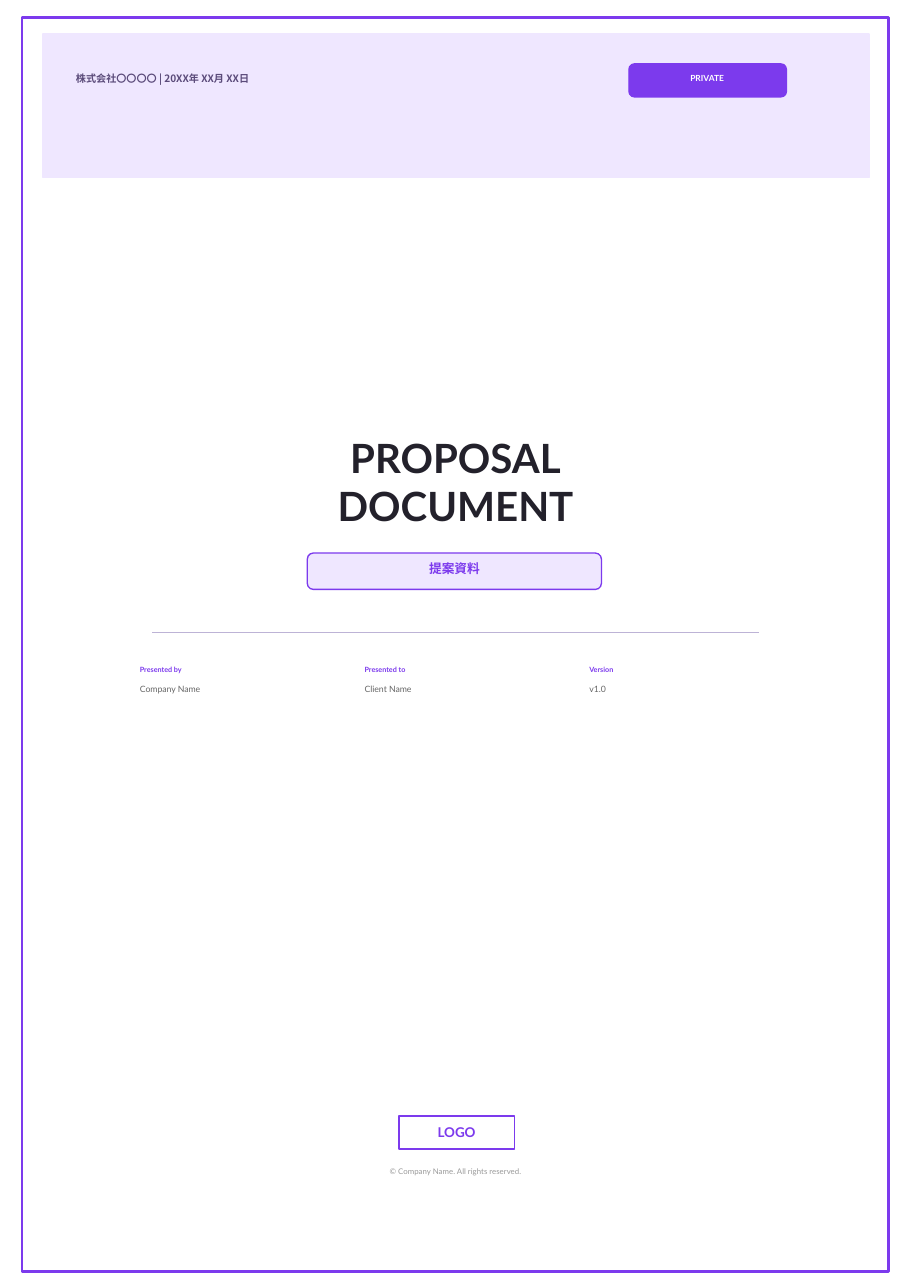
import dataclasses

import pptx
import pptx.dml.color
import pptx.enum.shapes
import pptx.enum.text
import pptx.oxml
import pptx.oxml.ns
import pptx.util

SHAPE = pptx.enum.shapes.MSO_SHAPE
ALIGN = pptx.enum.text.PP_ALIGN
CELL = 0.1  # inches per grid column and row
COLS, ROWS = 82.7, 116.9


@dataclasses.dataclass(frozen=True)
class Theme:
    accent: str = "7C3AED"
    tint: str = "EFE7FF"
    rule: str = "BDB3D6"
    ink: str = "23212B"
    date_ink: str = "5B4B7A"
    body: str = "666666"
    muted: str = "999999"
    white: str = "FFFFFF"
    latin: str = "Lato"
    japanese: str = "Noto Sans CJK JP"
    title: float = 26.3
    logo: float = 8.8
    subtitle: float = 8.3
    date: float = 6.6
    value: float = 5.7
    badge: float = 5.5
    footer: float = 5.1
    label: float = 4.7
    frame_line: float = 1.93
    logo_line: float = 1.05
    box_line: float = 0.88
    rule_line: float = 0.7


T = Theme()


def cells(n):
    return pptx.util.Inches(n * CELL)


def rgb(value):
    return pptx.dml.color.RGBColor.from_string(value)


def inside(box, x, y, w, h):
    """Move a rectangle, given in cells, to the corner of its box."""
    return box[0] + x, box[1] + y, w, h


def write(sp, lines, size, color, font=T.latin, bold=True, align=ALIGN.CENTER):
    tf = sp.text_frame
    for name, value in {
        "word_wrap": True,
        "auto_size": pptx.enum.text.MSO_AUTO_SIZE.NONE,
        "vertical_anchor": pptx.enum.text.MSO_ANCHOR.MIDDLE,
        "margin_left": 0, "margin_right": 0, "margin_top": 0, "margin_bottom": 0,
    }.items():
        setattr(tf, name, value)
    for i, line in enumerate(lines):
        p = tf.add_paragraph() if i else tf.paragraphs[0]
        p.alignment = align
        r = p.add_run()
        r.text = line
        for name, value in {"name": font, "size": pptx.util.Pt(size), "bold": bold}.items():
            setattr(r.font, name, value)
        r.font.color.rgb = rgb(color)
        ea = pptx.oxml.parse_xml(f'<a:ea {pptx.oxml.ns.nsdecls("a")} typeface="{font}"/>')
        r.font._element.append(ea)


def add_text(s, rect, text, size, color, **style):
    sp = s.shapes.add_textbox(*map(cells, rect))
    write(sp, [text], size, color, **style)


def add_box(s, rect, line, width, fill=None, kind=SHAPE.RECTANGLE):
    sp = s.shapes.add_shape(kind, *map(cells, rect))
    sp.shadow.inherit = False
    if fill:
        sp.fill.solid()
        sp.fill.fore_color.rgb = rgb(fill)
    else:
        sp.fill.background()
    sp.line.color.rgb = rgb(line)
    sp.line.width = pptx.util.Pt(width)


def add_header(s, box):
    add_box(s, box, T.tint, T.box_line, T.tint)
    add_text(s, inside(box, 3, 3.2, 30.3, 1.7), "株式会社〇〇〇〇 | 20XX年 XX月 XX日",
             T.date, T.date_ink, font=T.japanese, align=ALIGN.LEFT)
    add_box(s, inside(box, 53.2, 2.7, 14.3, 3), T.accent, T.box_line, T.accent,
            SHAPE.ROUNDED_RECTANGLE)
    add_text(s, inside(box, 53.6, 3.5, 13.4, 0.9), "PRIVATE", T.badge, T.white)


def add_title(s, box):
    sp = s.shapes.title
    rect = inside(box, 0, 0, box[2], 8.8)
    for name, value in zip(("left", "top", "width", "height"), rect):
        setattr(sp, name, cells(value))
    write(sp, ["PROPOSAL", "DOCUMENT"], T.title, T.ink)
    add_box(s, inside(box, 17.4, 10.9, 26.7, 3.3), T.accent, T.box_line, T.tint,
            SHAPE.ROUNDED_RECTANGLE)
    add_text(s, inside(box, 18.5, 11.7, 24.5, 1.2), "提案資料",
             T.subtitle, T.accent, font=T.japanese)


def add_details(s, box, details):
    """Draw a rule above equal columns, each a label over a value."""
    x, y, w, _ = box
    rule = s.shapes.add_connector(pptx.enum.shapes.MSO_CONNECTOR.STRAIGHT,
                                  *map(cells, (x + 1.1, y, x + 56.2, y)))
    rule.line.color.rgb = rgb(T.rule)
    rule.line.width = pptx.util.Pt(T.rule_line)
    rule._element.spPr.append(
        pptx.oxml.parse_xml(f'<a:effectLst {pptx.oxml.ns.nsdecls("a")}/>'))
    pitch = w / len(details)
    for i, (label, value) in enumerate(details):
        add_text(s, inside(box, i * pitch, 2.8, 13.2, 1.1), label,
                 T.label, T.accent, align=ALIGN.LEFT)
        add_text(s, inside(box, i * pitch, 4.6, 16.5, 1.1), value,
                 T.value, T.body, bold=False, align=ALIGN.LEFT)


def add_footer(s, box):
    add_box(s, inside(box, 9.2, 0, 10.5, 3), T.accent, T.logo_line)
    add_text(s, inside(box, 9.2, 0.4, 10.5, 2.1), "LOGO", T.logo, T.accent)
    add_text(s, inside(box, 0, 4.4, box[2], 1.2), "© Company Name. All rights reserved.",
             T.footer, T.muted, bold=False)


def build_cover(prs):
    s = prs.slides.add_slide(prs.slide_layouts[5])
    s.background.fill.solid()
    s.background.fill.fore_color.rgb = rgb(T.white)
    add_box(s, (2, 1.6, 78.7, 113.8), T.accent, T.frame_line)
    add_header(s, (3.9, 3.1, 75, 13))
    add_title(s, (10.5, 39.3, 61.7, 14.2))
    add_details(s, (12.7, 57.4, 61.2, 5.7), [
        ("Presented by", "Company Name"),
        ("Presented to", "Client Name"),
        ("Version", "v1.0"),
    ])
    add_footer(s, (27, 101.3, 28.7, 5.6))


def main():
    prs = pptx.Presentation()
    prs.slide_width, prs.slide_height = cells(COLS), cells(ROWS)
    build_cover(prs)
    prs.save("out.pptx")


if __name__ == "__main__":
    main()
